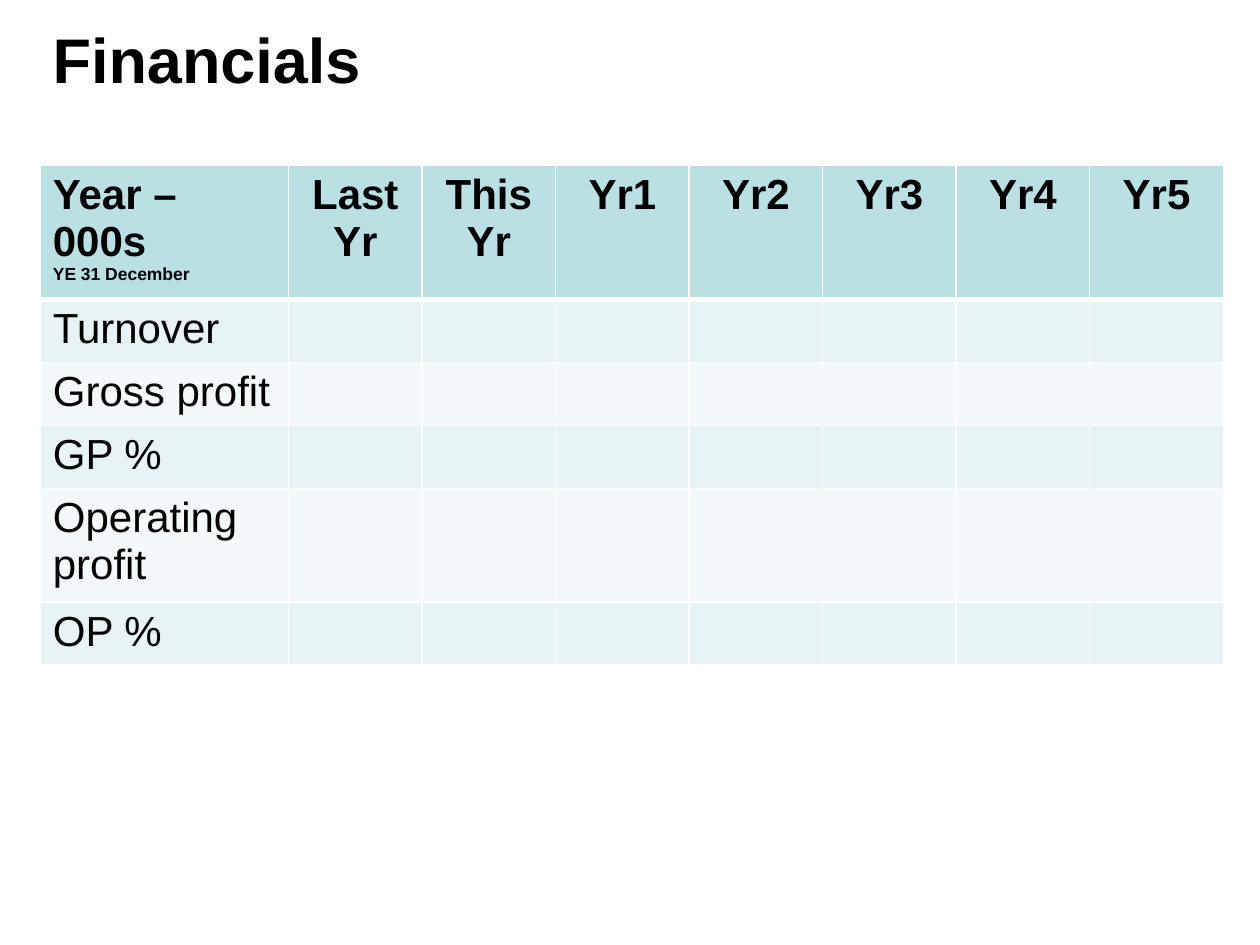
from lxml import etree
from pptx import Presentation
from pptx.dml.color import RGBColor
from pptx.enum.text import MSO_ANCHOR, PP_ALIGN
from pptx.oxml.ns import qn
from pptx.util import Inches, Pt

LEFT, CENTER = PP_ALIGN.LEFT, PP_ALIGN.CENTER
MIDDLE = MSO_ANCHOR.MIDDLE

COLORS = {
    "text": "000000",
    "border": "FFFFFF",
    "header": "BBE0E3",
    "odd_row": "E7F3F4",
    "even_row": "F3F9FA",
}
HEADERS = ["Year – 000s", "Last Yr", "This Yr", "Yr1", "Yr2", "Yr3", "Yr4", "Yr5"]
ROW_LABELS = ["Turnover", "Gross profit", "GP %", "Operating profit", "OP %"]


def write(paragraph, text, size=24, bold=False, align=LEFT):
    paragraph.alignment = align
    run = paragraph.add_run()
    run.text = text
    run.font.name = "Arial"
    run.font.size = Pt(size)
    run.font.bold = bold
    run.font.color.rgb = RGBColor.from_string(COLORS["text"])


def style_cell(cell, fill, top=1, bottom=1):
    """Set the border widths in points, then the fill, in schema order."""
    properties = cell._tc.get_or_add_tcPr()
    for side, width in (("L", 1), ("R", 1), ("T", top), ("B", bottom)):
        line = etree.SubElement(properties, qn(f"a:ln{side}"), w=str(Pt(width)))
        solid = etree.SubElement(line, qn("a:solidFill"))
        etree.SubElement(solid, qn("a:srgbClr"), val=COLORS["border"])
    cell.fill.solid()
    cell.fill.fore_color.rgb = RGBColor.from_string(COLORS[fill])


presentation = Presentation()
presentation.slide_width = Inches(10)
presentation.slide_height = Inches(7.5)
slide = presentation.slides.add_slide(presentation.slide_layouts[6])

title = slide.shapes.add_textbox(Inches(0.32), Inches(0.2), Inches(8.5), Inches(0.52))
title.text_frame.word_wrap = True
title.text_frame.vertical_anchor = MIDDLE
write(title.text_frame.paragraphs[0], "Financials", size=36, bold=True)

table = slide.shapes.add_table(
    len(ROW_LABELS) + 1, len(HEADERS),
    Inches(0.32), Inches(1.31), Inches(9.41), Inches(2.91),
).table
for index, column in enumerate(table.columns):
    column.width = Inches(1.06 if index else 1.97)
for index, row in enumerate(table.rows):
    row.height = Inches(0.43 if index else 0.75)

for index, header in enumerate(HEADERS):
    cell = table.cell(0, index)
    style_cell(cell, "header", bottom=3)
    write(cell.text_frame.paragraphs[0], header, bold=True,
          align=CENTER if index else LEFT)
write(table.cell(0, 0).text_frame.add_paragraph(), "YE 31 December", size=10, bold=True)

for row_index, label in enumerate(ROW_LABELS, start=1):
    for column_index in range(len(HEADERS)):
        style_cell(table.cell(row_index, column_index),
                   "odd_row" if row_index % 2 else "even_row",
                   top=3 if row_index == 1 else 1)
    write(table.cell(row_index, 0).text_frame.paragraphs[0], label)

presentation.save("out.pptx")
